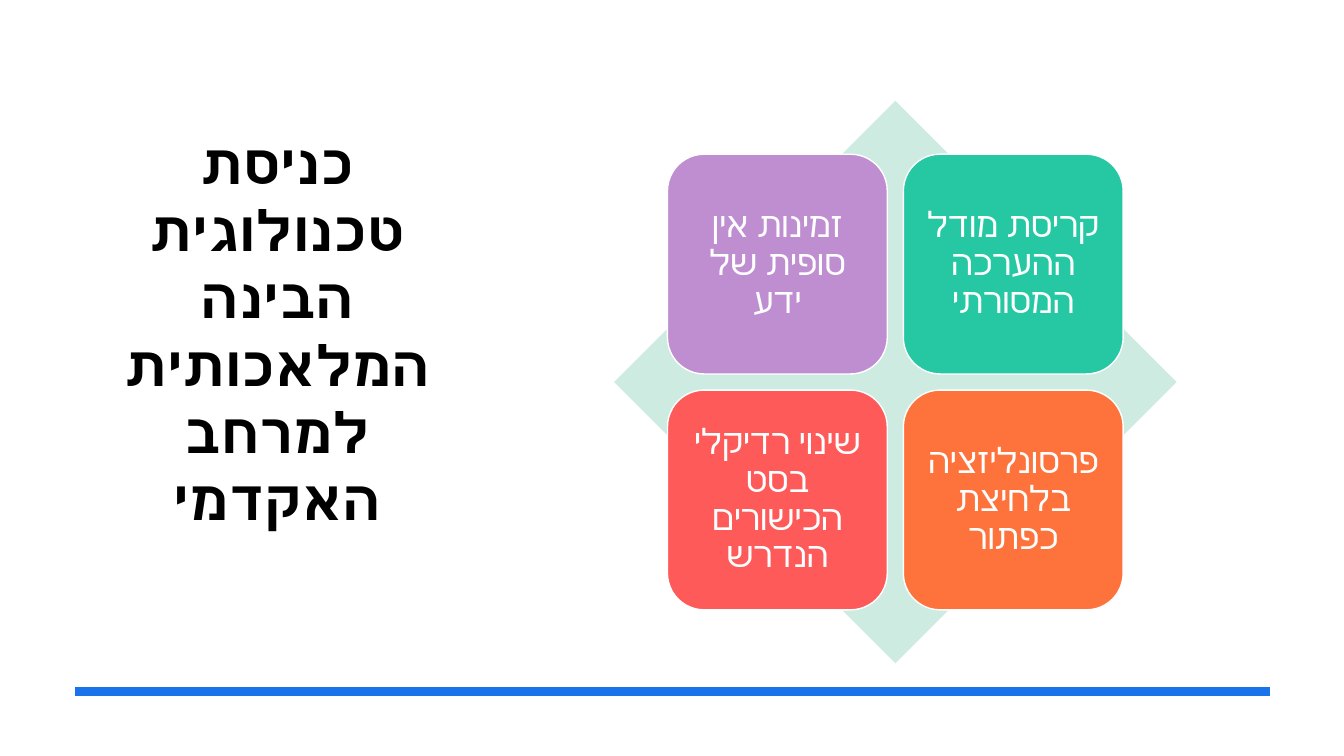
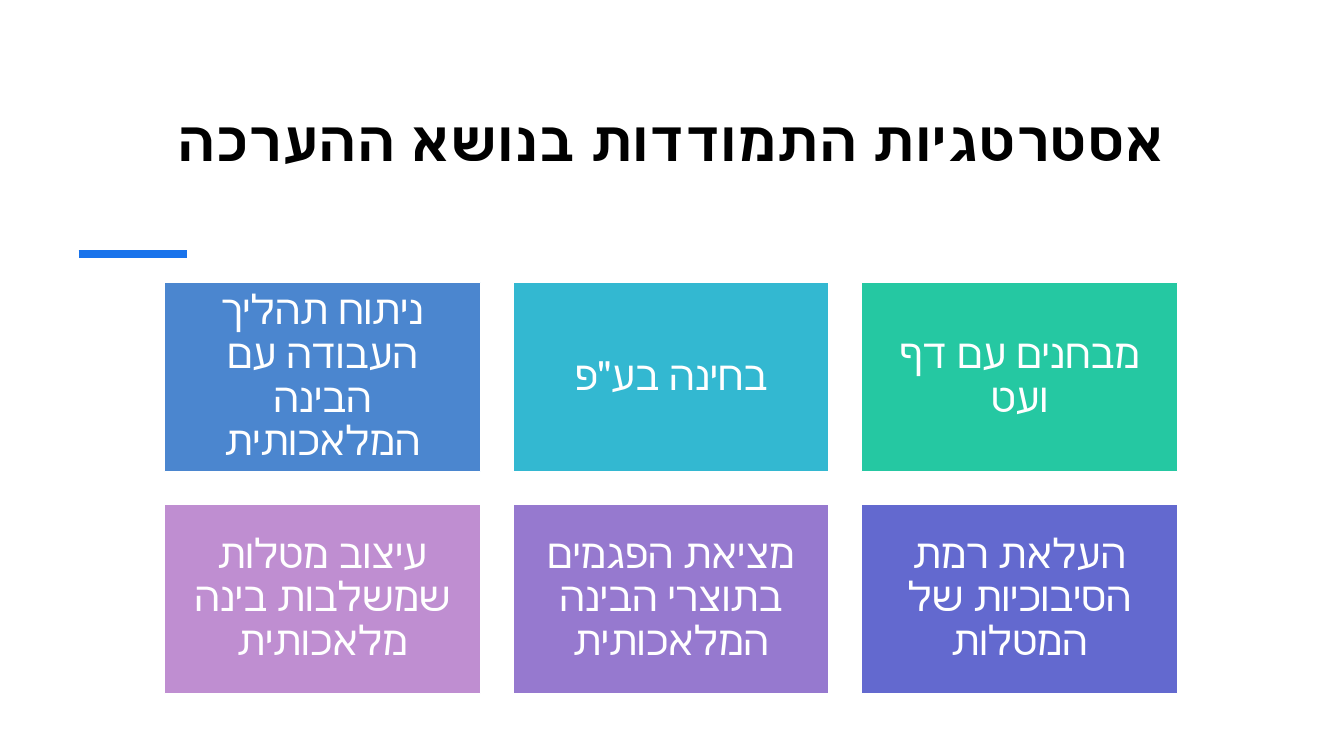
from pptx import Presentation
from pptx.dml.color import RGBColor
from pptx.enum.shapes import MSO_CONNECTOR as Connector, MSO_SHAPE as Preset
from pptx.enum.text import MSO_ANCHOR as Anchor, PP_ALIGN as Align
from pptx.oxml.ns import qn
from pptx.util import Inches, Pt
from lxml.etree import SubElement

WIDTH, HEIGHT = 13.33, 7.5
BLACK, WHITE, ACCENT, PALE = "000000", "FFFFFF", "1973EB", "CDEBE0"
TITLE = {"size": Pt(40), "bold": True}
CARD_LINE = 1

FORCES = [
    ("קריסת מודל ההערכה המסורתי", "25C8A2"),
    ("זמינות אין סופית של ידע", "BF8ED1"),
    ("פרסונליזציה בלחיצת כפתור", "FE733C"),
    ("שינוי רדיקלי בסט הכישורים הנדרש", "FE5A5A"),
]
STRATEGIES = [
    ("מבחנים עם דף ועט", "25C8A2"),
    ('בחינה בע"פ', "33B8D1"),
    ("ניתוח תהליך העבודה עם הבינה המלאכותית", "4B86CF"),
    ("העלאת רמת הסיבוכיות של המטלות", "6369CF"),
    ("מציאת הפגמים בתוצרי הבינה המלאכותית", "9679CF"),
    ("עיצוב מטלות שמשלבות בינה מלאכותית", "BF8ED1"),
]


def color(value):
    return RGBColor.from_string(value)


def apply(target, values):
    for name, value in values.items():
        setattr(target, name, value)


def inches(lengths):
    return [Inches(length) for length in lengths]


def write(box, text, ink, font, margin=0.1, spacing=1.0):
    frame = box.text_frame
    sides = ("left", "top", "right", "bottom")
    apply(frame, {f"margin_{side}": Inches(margin) for side in sides})
    apply(frame, {"word_wrap": True, "vertical_anchor": Anchor.MIDDLE})
    para = frame.paragraphs[0]
    apply(para, {"alignment": Align.CENTER, "line_spacing": spacing})
    para._p.get_or_add_pPr().set("rtl", "1")
    span = para.add_run()
    span.text = text
    apply(span.font, font)
    span.font.color.rgb = color(ink)


def add_title(page, text, area, face):
    box = page.shapes.add_textbox(*inches(area))
    write(box, text, BLACK, TITLE | {"name": face})


def add_rule(page, left, right, top):
    rule = page.shapes.add_connector(Connector.STRAIGHT, *inches((left, top, right, top)))
    rule.line.color.rgb = color(ACCENT)
    rule.line.width = Pt(6)
    SubElement(rule._element.spPr, qn("a:effectLst"))


def add_block(page, preset, area, fill, outline=None):
    block = page.shapes.add_shape(preset, *inches(area))
    block.shadow.inherit = False
    block.fill.solid()
    block.fill.fore_color.rgb = color(fill)
    if outline:
        block.line.color.rgb = color(outline)
        block.line.width = Pt(CARD_LINE)
    else:
        block.line.fill.background()
    return block


def add_cards(page, cards, preset, area, columns, gap, size, margin):
    left, top, width, height = area
    rows = len(cards) // columns
    card_width = (width - gap * (columns - 1)) / columns
    card_height = (height - gap * (rows - 1)) / rows
    for index, (text, fill) in enumerate(cards):
        row, column = divmod(index, columns)
        x = left + (columns - 1 - column) * (card_width + gap)
        y = top + row * (card_height + gap)
        card = add_block(page, preset, (x, y, card_width, card_height), fill, WHITE)
        write(card, text, WHITE, {"name": "Roboto", "size": Pt(size)}, margin, 0.9)


def add_page(deck):
    return deck.slides.add_slide(deck.slide_layouts[6])


def build_forces(deck):
    page = add_page(deck)
    add_title(page, "כניסת טכנולוגית הבינה המלאכותית למרחב האקדמי",
              (0.74, 1, 4.02, 4.55), "Lato")
    add_rule(page, 0.74, 12.6, 6.86)
    add_block(page, Preset.DIAMOND, (6.09, 1, 5.58, 5.58), PALE)
    add_cards(page, FORCES, Preset.ROUNDED_RECTANGLE,
              (6.62, 1.53, 4.52, 4.52), 2, 0.16, 25, 0.1)


def build_strategies(deck):
    page = add_page(deck)
    add_title(page, "אסטרטגיות התמודדות בנושא ההערכה",
              (0.7, 0.62, 11.91, 1.52), "Roboto")
    add_rule(page, 0.78, 1.85, 2.52)
    add_cards(page, STRATEGIES, Preset.RECTANGLE,
              (1.63, 2.8, 10.05, 4.08), 3, 0.32, 29, 0.12)


def main():
    deck = Presentation()
    apply(deck, {"slide_width": Inches(WIDTH), "slide_height": Inches(HEIGHT)})
    build_forces(deck)
    build_strategies(deck)
    deck.save("out.pptx")


if __name__ == "__main__":
    main()
